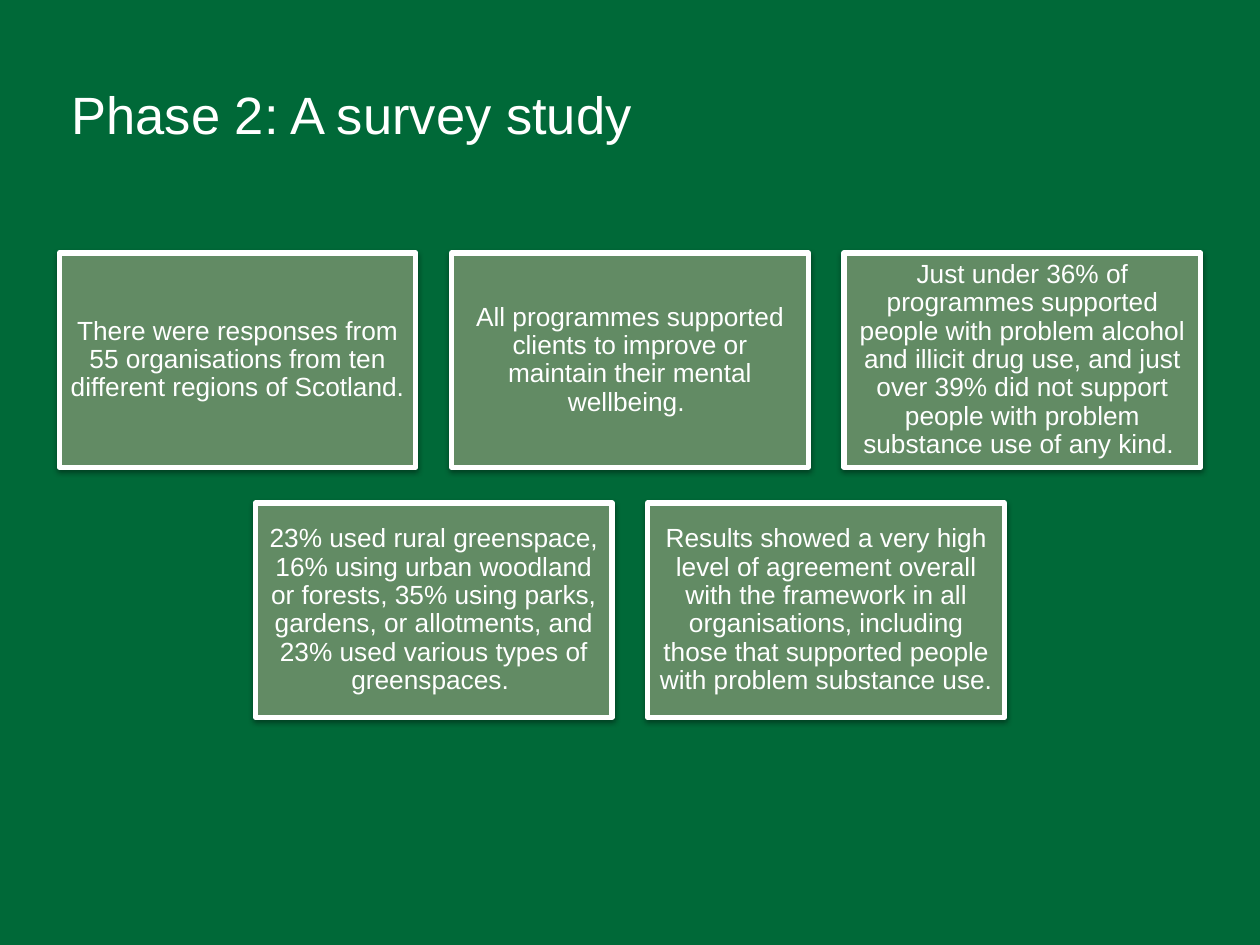
from dataclasses import dataclass

from lxml import etree
from pptx import Presentation
from pptx.dml.color import RGBColor
from pptx.enum.shapes import MSO_SHAPE
from pptx.enum.text import MSO_ANCHOR, MSO_AUTO_SIZE, PP_ALIGN
from pptx.oxml.ns import qn
from pptx.util import Cm, Pt

RECT = MSO_SHAPE.RECTANGLE
TOP, MIDDLE = MSO_ANCHOR.TOP, MSO_ANCHOR.MIDDLE
LEFT, CENTER = PP_ALIGN.LEFT, PP_ALIGN.CENTER
NO_FIT = MSO_AUTO_SIZE.NONE


@dataclass(frozen=True)
class Theme:
    back: RGBColor = RGBColor(0x00, 0x69, 0x38)
    card: RGBColor = RGBColor(0x62, 0x8B, 0x64)
    ink: RGBColor = RGBColor(0xFF, 0xFF, 0xFF)
    font: str = "Arial"
    title: Pt = Pt(30)
    body: Pt = Pt(15)
    line: Pt = Pt(3)


@dataclass(frozen=True)
class Card:
    text: str
    left: Cm
    top: Cm


THEME = Theme()
WIDE, HIGH = Cm(25.4), Cm(19.05)
CARD_W, CARD_H, GAP = Cm(7.19), Cm(4.32), Cm(0.72)
FIRST_TOP = Cm(5.1)
ROWS = [
    [
        "There were responses from 55 organisations from ten different regions of Scotland. ",
        "All programmes supported clients to improve or maintain their mental wellbeing. ",
        "Just under 36% of programmes supported people with problem alcohol and illicit "
        "drug use, and just over 39% did not support people with problem substance use "
        "of any kind. ",
    ],
    [
        "23% used rural greenspace, 16% using urban woodland or forests, 35% using parks, "
        "gardens, or allotments, and 23% used various types of greenspaces. ",
        "Results showed a very high level of agreement overall with the framework in all "
        "organisations, including those that supported people with problem substance use.",
    ],
]


def set_text(shape, text: str, size: Pt, align, anchor, spacing) -> None:
    frame = shape.text_frame
    frame.text = text
    frame.word_wrap = True
    frame.auto_size = NO_FIT
    frame.vertical_anchor = anchor
    para = frame.paragraphs[0]
    para.alignment = align
    para.line_spacing = spacing
    font = para.runs[0].font
    font.name, font.size, font.bold = THEME.font, size, False
    font.color.rgb = THEME.ink


def add_shadow(shape) -> None:
    """Give the shape a soft black shadow straight below it."""
    shape.shadow.inherit = False
    effects = shape._element.spPr.find(qn("a:effectLst"))
    outer = etree.SubElement(
        effects, qn("a:outerShdw"), blurRad=str(Pt(3.1)), dist=str(Pt(1.6)),
        dir="5400000", rotWithShape="0")
    black = etree.SubElement(outer, qn("a:srgbClr"), val="000000")
    etree.SubElement(black, qn("a:alpha"), val="38000")


def draw_card(slide, card: Card) -> None:
    shape = slide.shapes.add_shape(RECT, card.left, card.top, CARD_W, CARD_H)
    shape.fill.solid()
    shape.fill.fore_color.rgb = THEME.card
    shape.line.color.rgb = THEME.ink
    shape.line.width = THEME.line
    add_shadow(shape)
    set_text(shape, card.text, THEME.body, CENTER, MIDDLE, 0.9)
    frame = shape.text_frame
    frame.margin_left = frame.margin_right = Cm(0.16)
    frame.margin_top = frame.margin_bottom = Cm(0.16)


def place_cards() -> list[Card]:
    """Centre each row of cards across the slide."""
    cards = []
    for row, texts in enumerate(ROWS):
        span = len(texts) * (CARD_W + GAP) - GAP
        start = (WIDE - span) // 2
        top = FIRST_TOP + row * (CARD_H + GAP)
        cards += [Card(text, start + col * (CARD_W + GAP), top)
                  for col, text in enumerate(texts)]
    return cards


def draw_title(slide) -> None:
    title = slide.shapes.title
    title.left, title.top = Cm(1.19), Cm(1.73)
    title.width, title.height = Cm(23.01), Cm(2.87)
    set_text(title, "Phase 2: A survey study", THEME.title, LEFT, TOP, Pt(30))


def main() -> None:
    deck = Presentation()
    deck.slide_width, deck.slide_height = WIDE, HIGH
    slide = deck.slides.add_slide(deck.slide_layouts[5])
    slide.background.fill.solid()
    slide.background.fill.fore_color.rgb = THEME.back
    draw_title(slide)
    for card in place_cards():
        draw_card(slide, card)
    deck.save("out.pptx")


if __name__ == "__main__":
    main()
